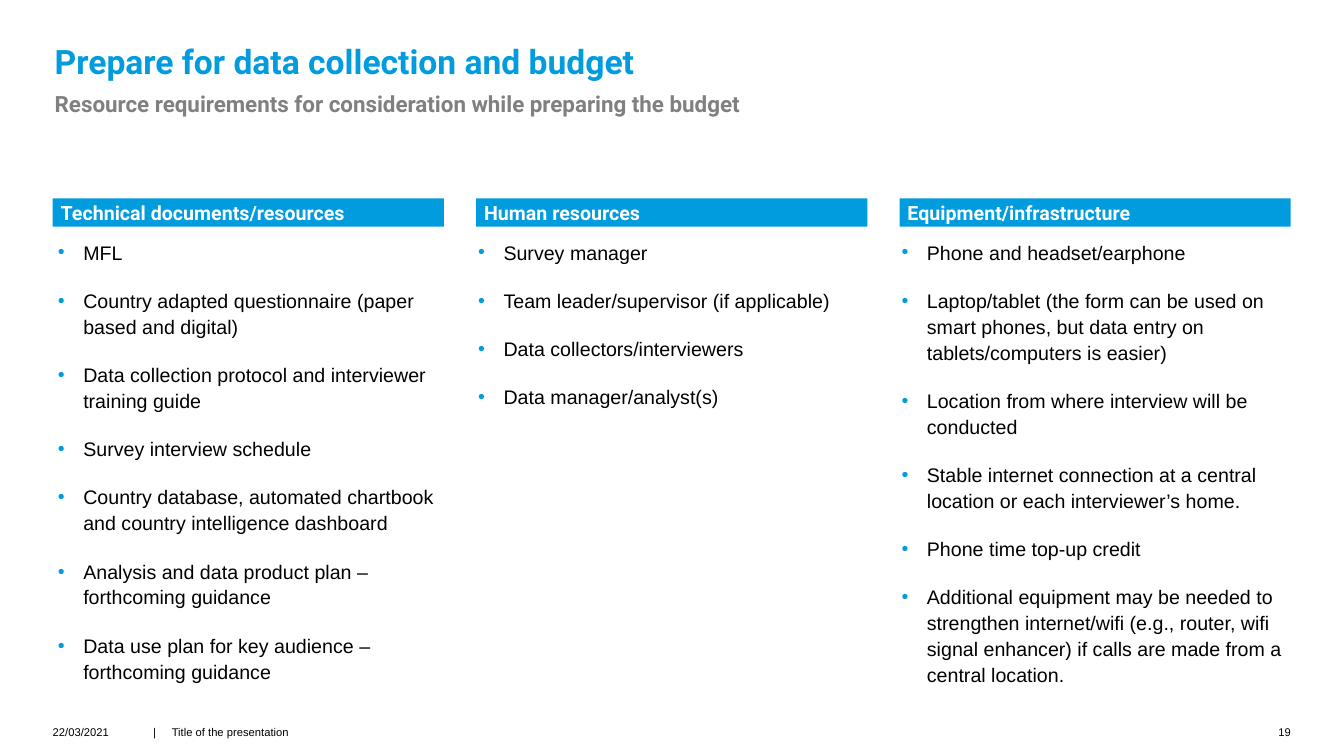
from lxml.etree import SubElement
from pptx import Presentation
from pptx.dml.color import RGBColor
from pptx.enum.shapes import MSO_SHAPE as Shape
from pptx.enum.text import MSO_ANCHOR as Anchor, PP_ALIGN as Align
from pptx.oxml.ns import qn
from pptx.util import Cm, Pt

# Content
TITLE = "Prepare for data collection and budget"
SUBTITLE = "Resource requirements for consideration while preparing the budget"
COLUMNS = [  # heading, list offset and list height in cm, items
    ("Technical documents/resources", 0.08, 11.76, [
        "MFL",
        "Country adapted questionnaire (paper based and digital)",
        "Data collection protocol and interviewer training guide",
        "Survey interview schedule",
        "Country database, automated chartbook and country intelligence dashboard",
        "Analysis and data product plan – forthcoming guidance",
        "Data use plan for key audience – forthcoming guidance",
    ]),
    ("Human resources", 0, 10.77, [
        "Survey manager",
        "Team leader/supervisor (if applicable)",
        "Data collectors/interviewers",
        "Data manager/analyst(s)",
    ]),
    ("Equipment/infrastructure", 0, 10.77, [
        "Phone and headset/earphone",
        "Laptop/tablet (the form can be used on smart phones, but data entry on "
        "tablets/computers is easier)",
        "Location from where interview will be conducted",
        "Stable internet connection at a central location or each interviewer’s home.",
        "Phone time top-up credit",
        "Additional equipment may be needed to strengthen internet/wifi (e.g., router, "
        "wifi signal enhancer) if calls are made from a central location.",
    ]),
]
FOOTER = [  # text, left and width in cm, alignment
    ("22/03/2021", 1.33, 2.18, Align.LEFT),
    ("|\tTitle of the presentation", 3.86, 8.26, Align.LEFT),
    ("19", 31.72, 0.81, Align.RIGHT),
]

# Style and grid
BLUE = RGBColor(0x00, 0x9C, 0xDE)
GREY = RGBColor(0x80, 0x80, 0x80)
BLACK = RGBColor(0x00, 0x00, 0x00)
WHITE = RGBColor(0xFF, 0xFF, 0xFF)
LEFT, COLUMN_WIDTH, COLUMN_PITCH = 1.33, 9.86, 10.67
INDENT = Cm(0.64)

deck = Presentation()
deck.slide_width, deck.slide_height = Cm(33.87), Cm(19.05)
page = deck.slides.add_slide(deck.slide_layouts[6])


def set_frame(shape, anchor, side=0.05, edge=0, right=None):
    frame = shape.text_frame
    frame.word_wrap = True
    frame.vertical_anchor = anchor
    frame.margin_left = Cm(side)
    frame.margin_right = Cm(side if right is None else right)
    frame.margin_top = frame.margin_bottom = Cm(edge)
    return frame


def add_box(left, top, width, height):
    return page.shapes.add_textbox(Cm(left), Cm(top), Cm(width), Cm(height))


def style(para, name, size, color, bold=False, align=Align.LEFT):
    para.alignment = align
    font = para.font
    font.name, font.size, font.bold = name, Pt(size), bold
    font.color.rgb = color


def add_bullet(para):
    props = para._p.get_or_add_pPr()
    props.set("marL", str(INDENT))
    props.set("indent", str(-INDENT))
    SubElement(SubElement(props, qn("a:buClr")), qn("a:srgbClr"), val=str(BLUE))
    SubElement(props, qn("a:buFont"), typeface="Arial")
    SubElement(props, qn("a:buChar"), char="•")


# Title and subtitle
para = set_frame(add_box(LEFT, 1, 23.62, 1.07), Anchor.BOTTOM, right=1).paragraphs[0]
para.text = TITLE
para.line_spacing = 0.9
style(para, "Roboto", 24, BLUE, bold=True)

para = set_frame(add_box(LEFT, 2.18, 22.66, 0.81), Anchor.MIDDLE).paragraphs[0]
para.text = SUBTITLE
para.line_spacing = 1.1
style(para, "Roboto", 16, GREY, bold=True)

# Columns: heading bar above a bulleted list
for number, (heading, offset, height, items) in enumerate(COLUMNS):
    left = LEFT + number * COLUMN_PITCH
    bar = page.shapes.add_shape(
        Shape.RECTANGLE, Cm(left), Cm(5), Cm(COLUMN_WIDTH), Cm(0.71))
    bar.shadow.inherit = False
    bar.fill.solid()
    bar.fill.fore_color.rgb = BLUE
    bar.line.fill.background()
    para = set_frame(bar, Anchor.MIDDLE, 0.2, 0.05).paragraphs[0]
    para.text = heading
    style(para, "Roboto", 14, WHITE, bold=True)

    frame = set_frame(add_box(left + offset, 6, COLUMN_WIDTH, height), Anchor.TOP)
    for index, item in enumerate(items):
        para = frame.add_paragraph() if index else frame.paragraphs[0]
        para.text = item
        add_bullet(para)
        para.line_spacing = 1.1
        para.space_before = Pt(10 if index else 0)
        para.space_after = Pt(6)
        style(para, "Arial", 14, BLACK)

# Footer
for text, left, width, align in FOOTER:
    para = set_frame(add_box(left, 18.29, width, 0.51), Anchor.TOP, 0).paragraphs[0]
    para.text = text
    if "\t" in text:
        tabs = SubElement(para._p.get_or_add_pPr(), qn("a:tabLst"))
        SubElement(tabs, qn("a:tab"), pos=str(Cm(0.47)), algn="l")
    style(para, "Arial", 8, BLACK, align=align)

deck.save("out.pptx")
